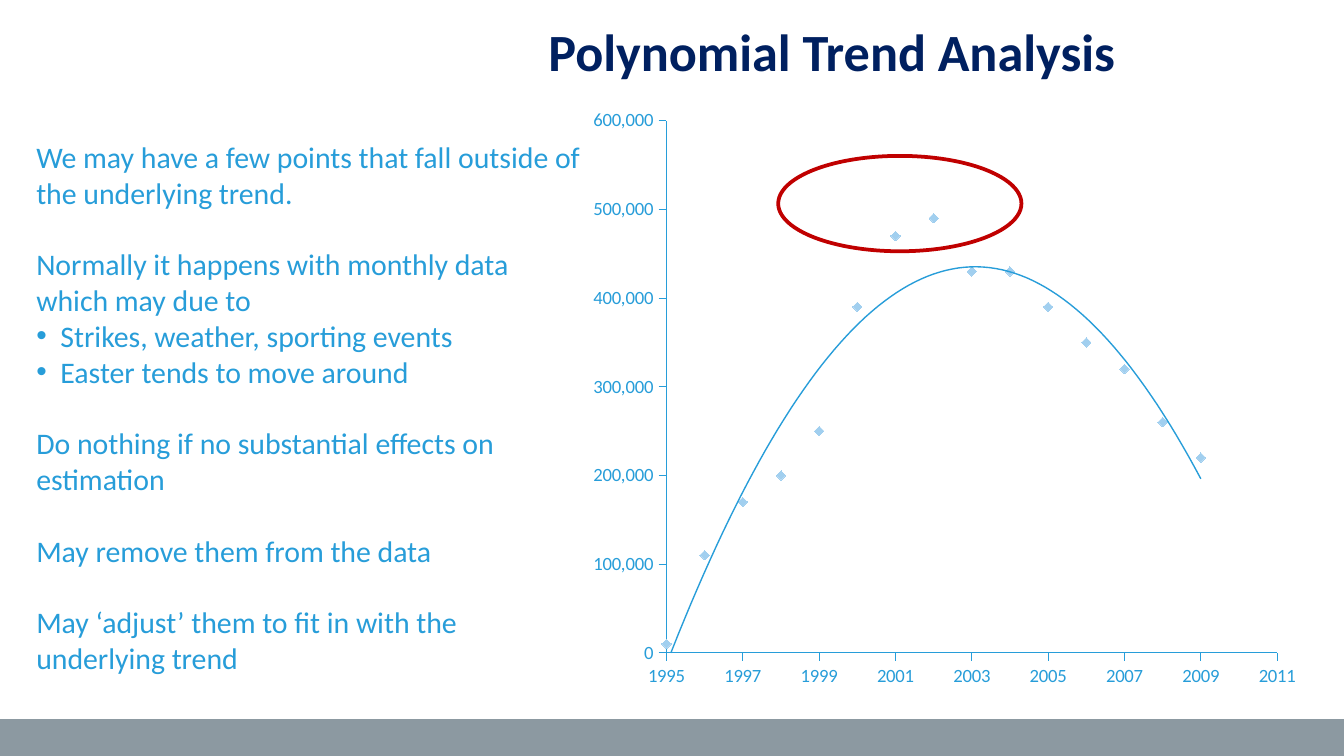
from dataclasses import dataclass
from lxml import etree
from pptx import Presentation, oxml, util as u
from pptx.chart.data import XyChartData
from pptx.dml.color import RGBColor
from pptx.enum import chart as ch, shapes, text
from pptx.oxml import ns

FONT = "Calibri"
BLUE, PALE, NAVY = "279DD9", "A1CFEF", "002060"
RED, GREY = "C00000", "8C99A1"


@dataclass
class Box:
    x: float
    y: float
    w: float
    h: float

    def args(self) -> tuple:
        return tuple(u.Inches(v) for v in (self.x, self.y, self.w, self.h))


@dataclass
class Item:
    words: str
    gap: bool = True
    dot: bool = False


@dataclass
class Scale:
    low: float
    high: float
    step: float
    form: str


ITEMS = [
    Item("We may have a few points that fall outside of the underlying trend.", gap=False),
    Item("Normally it happens with monthly data which may due to"),
    Item("Strikes, weather, sporting events", gap=False, dot=True),
    Item("Easter tends to move around", gap=False, dot=True),
    Item("Do nothing if no substantial effects on estimation"),
    Item("May remove them from the data"),
    Item("May ‘adjust’ them to fit in with the underlying trend"),
]
START = 1995
COUNTS = [10000, 110000, 170000, 200000, 250000, 390000, 470000, 490000,
          430000, 430000, 390000, 350000, 320000, 260000, 220000]
YEARS = Scale(START, 2011, 2, "0")
LEVELS = Scale(0, 600000, 100000, "#,##0")


def rgb(code: str) -> RGBColor:
    return RGBColor.from_string(code)


def style(font, size: float, code: str, bold: bool = False) -> None:
    font.name, font.size, font.bold = FONT, u.Pt(size), bold
    font.color.rgb = rgb(code)


def place(shape, box: Box) -> None:
    shape.left, shape.top, shape.width, shape.height = box.args()


def draw(slide, kind, box: Box, fill: str = "", line: str = "") -> None:
    shape = slide.shapes.add_shape(kind, *box.args())
    shape.shadow.inherit = False
    if fill:
        shape.fill.solid()
        shape.fill.fore_color.rgb = rgb(fill)
    else:
        shape.fill.background()
    if line:
        shape.line.color.rgb = rgb(line)
        shape.line.width = u.Pt(2)
    else:
        shape.line.fill.background()


def head(slide) -> None:
    title = slide.shapes.title
    place(title, Box(3.98, -0.04, 6.02, 0.84))
    frame = title.text_frame
    frame.text = "Polynomial Trend Analysis"
    frame.auto_size = text.MSO_AUTO_SIZE.NONE
    frame.vertical_anchor = text.MSO_ANCHOR.MIDDLE
    frame.paragraphs[0].alignment = text.PP_ALIGN.LEFT
    style(frame.paragraphs[0].runs[0].font, 28, NAVY, True)


def write(para, item: Item) -> None:
    para.text = item.words
    para.line_spacing = 1.0
    para.space_before = u.Pt(19.2 if item.gap else 0)
    para.space_after = u.Pt(0)
    props = para._p.get_or_add_pPr()
    inset = u.Inches(0.18) if item.dot else 0
    props.set("marL", str(inset))
    props.set("indent", str(-inset))
    if item.dot:
        etree.SubElement(props, ns.qn("a:buFont"), typeface="Arial")
        etree.SubElement(props, ns.qn("a:buChar"), char="•")
    else:
        etree.SubElement(props, ns.qn("a:buNone"))
    style(para.runs[0].font, 16, BLUE)


def notes(slide) -> None:
    body = slide.placeholders[1]
    place(body, Box(0.17, 0.98, 4.28, 4.41))
    frame = body.text_frame
    frame.auto_size = text.MSO_AUTO_SIZE.NONE
    frame.vertical_anchor = text.MSO_ANCHOR.TOP
    for i, item in enumerate(ITEMS):
        write(frame.add_paragraph() if i else frame.paragraphs[0], item)


def rule(axis, scale: Scale) -> None:
    axis.minimum_scale, axis.maximum_scale = scale.low, scale.high
    axis.major_unit = scale.step
    axis.has_major_gridlines = False
    axis.major_tick_mark = ch.XL_TICK_MARK.OUTSIDE
    axis.minor_tick_mark = ch.XL_TICK_MARK.NONE
    axis.tick_labels.number_format = scale.form
    axis.tick_labels.number_format_is_linked = False
    axis.format.line.color.rgb = rgb(BLUE)
    axis.format.line.width = u.Pt(0.5)


def trend(series) -> None:
    node = oxml.parse_xml(
        f'<c:trendline {ns.nsdecls("c", "a")}><c:spPr><a:ln w="{u.Pt(0.75)}">'
        f'<a:solidFill><a:srgbClr val="{BLUE}"/></a:solidFill></a:ln></c:spPr>'
        '<c:trendlineType val="poly"/><c:order val="2"/>'
        '<c:dispRSqr val="0"/><c:dispEq val="0"/></c:trendline>')
    series._element.find(ns.qn("c:xVal")).addprevious(node)


def fit(chart, box: Box) -> None:
    area = chart._chartSpace.chart.plotArea
    for old in area.findall(ns.qn("c:layout")):
        area.remove(old)
    parts = "".join(f'<c:{k} val="{v}"/>' for k, v in (
        ("layoutTarget", "inner"), ("xMode", "edge"), ("yMode", "edge"),
        ("x", box.x), ("y", box.y), ("w", box.w), ("h", box.h)))
    area.insert(0, oxml.parse_xml(
        f'<c:layout {ns.nsdecls("c")}><c:manualLayout>{parts}</c:manualLayout></c:layout>'))


def plot(slide, box: Box) -> None:
    data = XyChartData()
    points = data.add_series("Series 1")
    for year, count in enumerate(COUNTS, START):
        points.add_data_point(year, count)
    chart = slide.shapes.add_chart(ch.XL_CHART_TYPE.XY_SCATTER, *box.args(), data).chart
    chart.has_title = chart.has_legend = False
    style(chart.font, 10, BLUE)
    chart.plots[0].vary_by_categories = False
    rule(chart.category_axis, YEARS)
    rule(chart.value_axis, LEVELS)
    series = chart.plots[0].series[0]
    series.smooth = False
    series.format.line.fill.background()
    mark = series.marker
    mark.style, mark.size = ch.XL_MARKER_STYLE.DIAMOND, 5
    mark.format.fill.solid()
    mark.format.fill.fore_color.rgb = rgb(PALE)
    mark.format.line.color.rgb = rgb(PALE)
    trend(series)
    fit(chart, Box(0.12, 0.04, 0.84, 0.89))


def main() -> None:
    deck = Presentation()
    deck.slide_width = u.Inches(10)
    deck.slide_height = deck.slide_width * 9 // 16
    slide = deck.slides.add_slide(deck.slide_layouts[1])
    draw(slide, shapes.MSO_SHAPE.RECTANGLE, Box(0, 5.35, 10, 0.28), fill=GREY)
    notes(slide)
    plot(slide, Box(4.31, 0.72, 5.41, 4.45))
    head(slide)
    draw(slide, shapes.MSO_SHAPE.OVAL, Box(5.79, 1.16, 1.81, 0.71), line=RED)
    deck.save("out.pptx")


if __name__ == "__main__":
    main()
